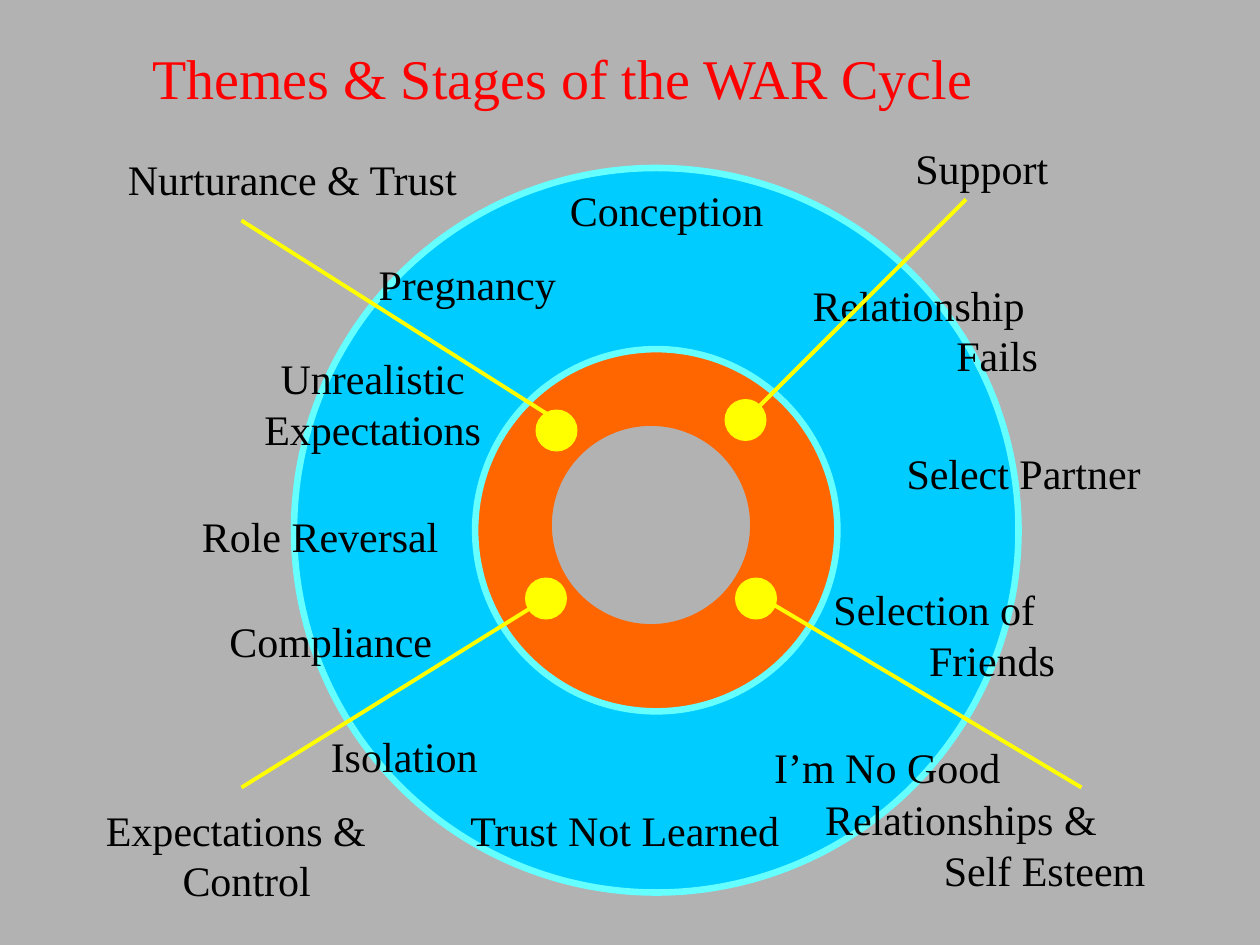
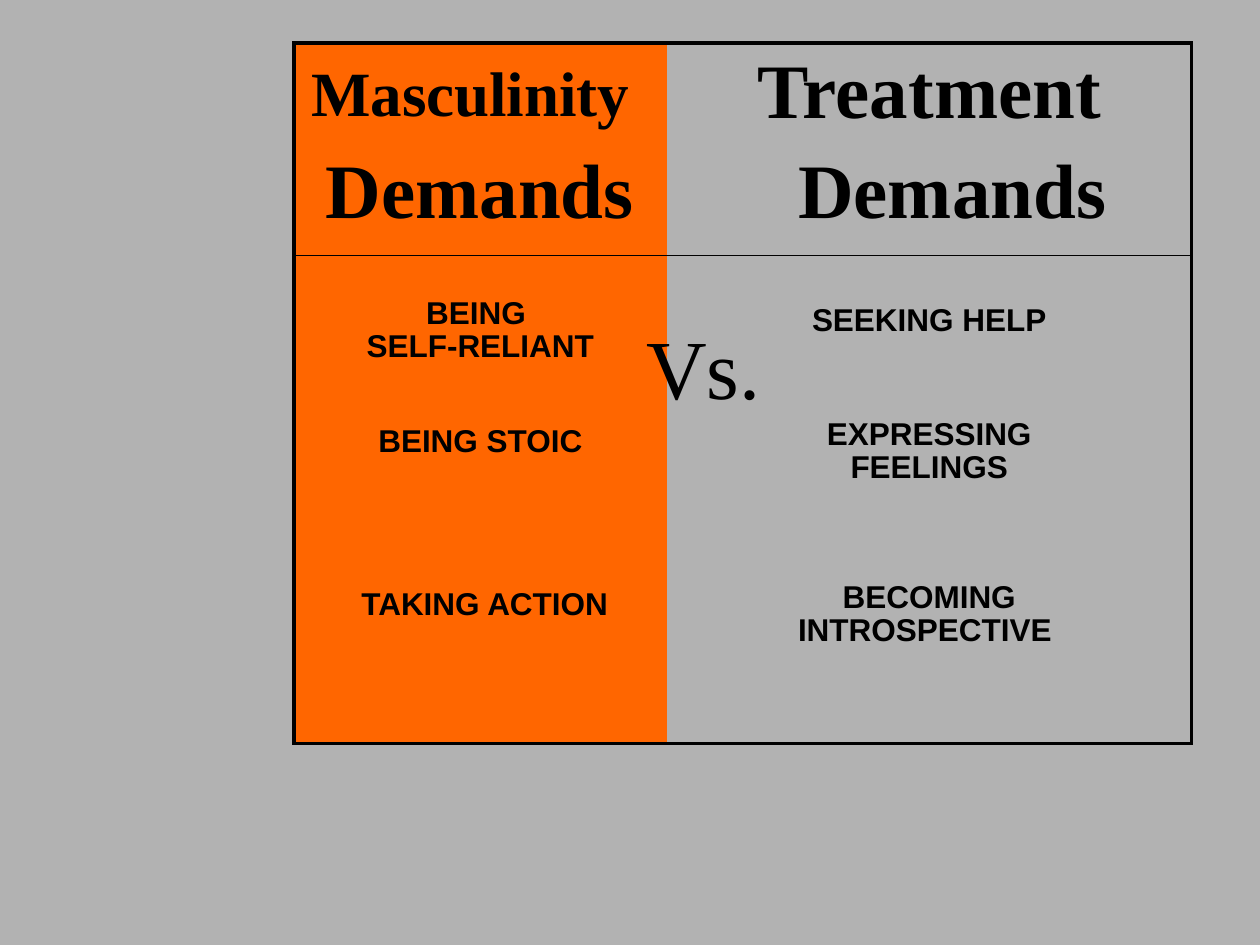
from dataclasses import dataclass
from typing import Any

import lxml.etree
import pptx
import pptx.dml.color
import pptx.enum.shapes
import pptx.enum.text
import pptx.oxml.ns
import pptx.util

Align = pptx.enum.text.PP_ALIGN
Shape = pptx.enum.shapes.MSO_SHAPE
Anchor = pptx.enum.text.MSO_ANCHOR


@dataclass(frozen=True)
class Theme:
    back: str = "B2B2B2"
    ink: str = "000000"
    red: str = "FF0000"
    orange: str = "FF6600"
    blue: str = "00CCFF"
    rim: str = "66FFFF"
    yellow: str = "FFFF00"
    serif: str = "Times New Roman"
    sans: str = "Arial"
    title: int = 32
    label: int = 24
    versus: int = 48
    large: int = 44
    small: int = 36
    body: int = 18


@dataclass(frozen=True)
class Label:
    lines: tuple[str, ...]
    col: float
    row: float
    align: Any = Align.CENTER
    indent: float = 0
    wide: float = 33


@dataclass(frozen=True)
class Ring:
    col: float
    row: float
    size: float
    fill: str
    line: str
    weight: float


@dataclass(frozen=True)
class Spoke:
    start: tuple[float, float]
    end: tuple[float, float]


@dataclass(frozen=True)
class Head:
    lines: tuple[str, ...]
    sizes: tuple[int, ...]
    indent: float
    gap: float
    left: float = 0
    right: float = 0
    drop: float = 0


@dataclass(frozen=True)
class Entry:
    lines: tuple[str, ...]
    tight: float = 1
    drop: float = 0


LOOK = Theme()
COLS, ROWS = 120, 90
WIDE, HIGH = pptx.util.Inches(10), pptx.util.Inches(7.5)
DOT = 4

RINGS = (
    Ring(43, 31, 38, LOOK.orange, LOOK.orange, 0.75),
    Ring(28, 16, 69, LOOK.blue, LOOK.rim, 3.75),
)
STAGES = (
    Label(("Conception",), 47, 17),
    Label(("Pregnancy",), 28, 24),
    Label(("Unrealistic", "Expectations"), 19, 33),
    Label(("Role Reversal",), 14, 48),
    Label(("Compliance",), 15, 58),
    Label(("Isolation",), 22, 69),
    Label(("Trust Not Learned",), 43, 76),
    Label(("I’m No Good",), 68, 70),
    Label(("Selection of", "Friends"), 78.2, 55, Align.LEFT, 9.1),
    Label(("Select Partner",), 81, 42),
    Label(("Relationship", "Fails"), 76.2, 26, Align.LEFT, 13.7),
)
THEMES = (
    Label(("Nurturance & Trust",), 11, 14, Align.LEFT, wide=37),
    Label(("Support",), 86, 13, Align.LEFT),
    Label(("Expectations &", "Control"), 8.9, 76, Align.LEFT, 7.3),
    Label(("Relationships &", "Self Esteem"), 77.4, 75, Align.LEFT, 11.3, 40),
)
SPOKES = (
    Spoke((53, 40), (23, 21)),
    Spoke((52, 57), (23, 75)),
    Spoke((92, 19), (72, 39)),
    Spoke((103, 75), (71, 56)),
)
DOTS = ((51, 39), (69, 38), (50, 55), (70, 55))

WIDTHS = (35.5, 50)
HEIGHTS = (20.2, 15.5, 15.5, 15.5)
HEADS = (
    Head(("Masculinity", "Demands"), (LOOK.small, LOOK.large), 1.8, 11, -0.6, 1.3, 1.1),
    Head(("Treatment", "Demands"), (LOOK.large, LOOK.large), 4.4, 8.8),
)
ENTRIES = (
    (Entry(("BEING ", "SELF-RELIANT"), 0.75, 4), Entry(("SEEKING HELP",), drop=4)),
    (Entry(("BEING STOIC",)), Entry(("EXPRESSING", "FEELINGS"), 0.75)),
    (Entry((" TAKING ACTION",)), Entry(("BECOMING", "INTROSPECTIVE "), 0.75)),
)


def across(count: float) -> int:
    return round(WIDE * count / COLS)


def down(count: float) -> int:
    return round(HIGH * count / ROWS)


def tint(code: str) -> pptx.dml.color.RGBColor:
    return pptx.dml.color.RGBColor.from_string(code)


def write(frame: Any, lines: tuple[str, ...], *, sizes: tuple[float, ...],
          font: str = LOOK.serif, color: str = LOOK.ink, bold: bool = False,
          align: Any = Align.CENTER, indent: float = 0, gap: float = 0,
          tight: float = 1) -> None:
    frame.word_wrap = True
    for rank, line in enumerate(lines):
        para = frame.add_paragraph() if rank else frame.paragraphs[0]
        para.alignment = align
        para.line_spacing = tight
        if rank:
            para.space_before = pptx.util.Pt(gap)
            para._p.get_or_add_pPr().set("marL", str(across(indent)))
        run = para.add_run()
        run.text = line
        run.font.name = font
        run.font.size = pptx.util.Pt(sizes[min(rank, len(sizes) - 1)])
        run.font.bold = bold
        run.font.color.rgb = tint(color)


def frame(slide: Any, col: float, row: float, wide: float, high: float) -> Any:
    return slide.shapes.add_textbox(
        across(col), down(row), across(wide), down(high)).text_frame


def label(slide: Any, item: Label) -> None:
    write(frame(slide, item.col, item.row, item.wide, 1 + 5 * len(item.lines)),
          item.lines, sizes=(LOOK.label,), align=item.align, indent=item.indent)


def round_shape(slide: Any, kind: Any, col: float, row: float, size: float,
                fill: str) -> Any:
    shape = slide.shapes.add_shape(kind, across(col), down(row), across(size), down(size))
    shape.shadow.inherit = False
    shape.fill.solid()
    shape.fill.fore_color.rgb = tint(fill)
    shape.line.fill.background()
    return shape


def ring(slide: Any, item: Ring) -> None:
    shape = round_shape(slide, Shape.DONUT, item.col, item.row, item.size, item.fill)
    shape.adjustments[0] = 0.25
    shape.line.color.rgb = tint(item.line)
    shape.line.width = pptx.util.Pt(item.weight)


def spoke(slide: Any, item: Spoke) -> None:
    line = slide.shapes.add_connector(
        pptx.enum.shapes.MSO_CONNECTOR.STRAIGHT,
        across(item.start[0]), down(item.start[1]),
        across(item.end[0]), down(item.end[1]))
    line.line.color.rgb = tint(LOOK.yellow)
    line.line.width = pptx.util.Pt(2.25)
    lxml.etree.SubElement(line._element.spPr, pptx.oxml.ns.qn("a:effectLst"))


def edge(cell: Any, **weights: float) -> None:
    name = pptx.oxml.ns.qn
    props = cell._tc.get_or_add_tcPr()
    for side in "LRTB":
        weight = weights.get(side, 0)
        line = lxml.etree.SubElement(props, name(f"a:ln{side}"))
        line.set("w", str(pptx.util.Pt(weight)))
        if weight:
            fill = lxml.etree.SubElement(line, name("a:solidFill"))
            lxml.etree.SubElement(fill, name("a:srgbClr")).set("val", LOOK.ink)
        else:
            lxml.etree.SubElement(line, name("a:noFill"))


def style(cell: Any, row: int, col: int) -> None:
    last = len(HEIGHTS) - 1
    edge(cell,
         L=0 if col else 2.25,
         R=2.25 if col else 0,
         T={0: 2.25, 1: 0.5}.get(row, 0),
         B={0: 0.5, last: 2.25}.get(row, 0))
    cell.fill.solid()
    cell.fill.fore_color.rgb = tint((LOOK.orange, LOOK.back)[col])


def grid(slide: Any) -> None:
    table = slide.shapes.add_table(
        len(HEIGHTS), len(WIDTHS), across(28), down(4.1),
        across(sum(WIDTHS)), down(sum(HEIGHTS))).table
    table.first_row = table.horz_banding = False
    for col, wide in enumerate(WIDTHS):
        table.columns[col].width = across(wide)
    for row, high in enumerate(HEIGHTS):
        table.rows[row].height = down(high)
        for col in range(len(WIDTHS)):
            cell = table.cell(row, col)
            style(cell, row, col)
            if row == 0:
                head = HEADS[col]
                cell.margin_left += across(head.left)
                cell.margin_right += across(head.right)
                cell.margin_top += down(head.drop)
                write(cell.text_frame, head.lines, sizes=head.sizes, bold=True,
                      indent=head.indent, gap=head.gap)
            else:
                entry = ENTRIES[row - 1][col]
                cell.margin_top += down(entry.drop)
                write(cell.text_frame, entry.lines, sizes=(LOOK.body,), font=LOOK.sans,
                      bold=True, gap=3.8, tight=entry.tight)


def page(deck: Any) -> Any:
    slide = deck.slides.add_slide(deck.slide_layouts[6])
    slide.background.fill.solid()
    slide.background.fill.fore_color.rgb = tint(LOOK.back)
    return slide


def cycle(deck: Any) -> None:
    slide = page(deck)
    title = frame(slide, 13.3, 0, 100, 14.7)
    title.vertical_anchor = Anchor.MIDDLE
    write(title, ("Themes & Stages of the WAR Cycle",), sizes=(LOOK.title,),
          color=LOOK.red, align=Align.LEFT)
    for item in RINGS:
        ring(slide, item)
    for item in STAGES:
        label(slide, item)
    for item in SPOKES:
        spoke(slide, item)
    for item in THEMES:
        label(slide, item)
    for col, row in DOTS:
        round_shape(slide, Shape.OVAL, col, row, DOT, LOOK.yellow)


def demands(deck: Any) -> None:
    slide = page(deck)
    grid(slide)
    write(frame(slide, 60, 29.5, 14, 11), ("Vs.",), sizes=(LOOK.versus,))


def main() -> None:
    deck = pptx.Presentation()
    deck.slide_width, deck.slide_height = WIDE, HIGH
    cycle(deck)
    demands(deck)
    deck.save("out.pptx")


if __name__ == "__main__":
    main()
